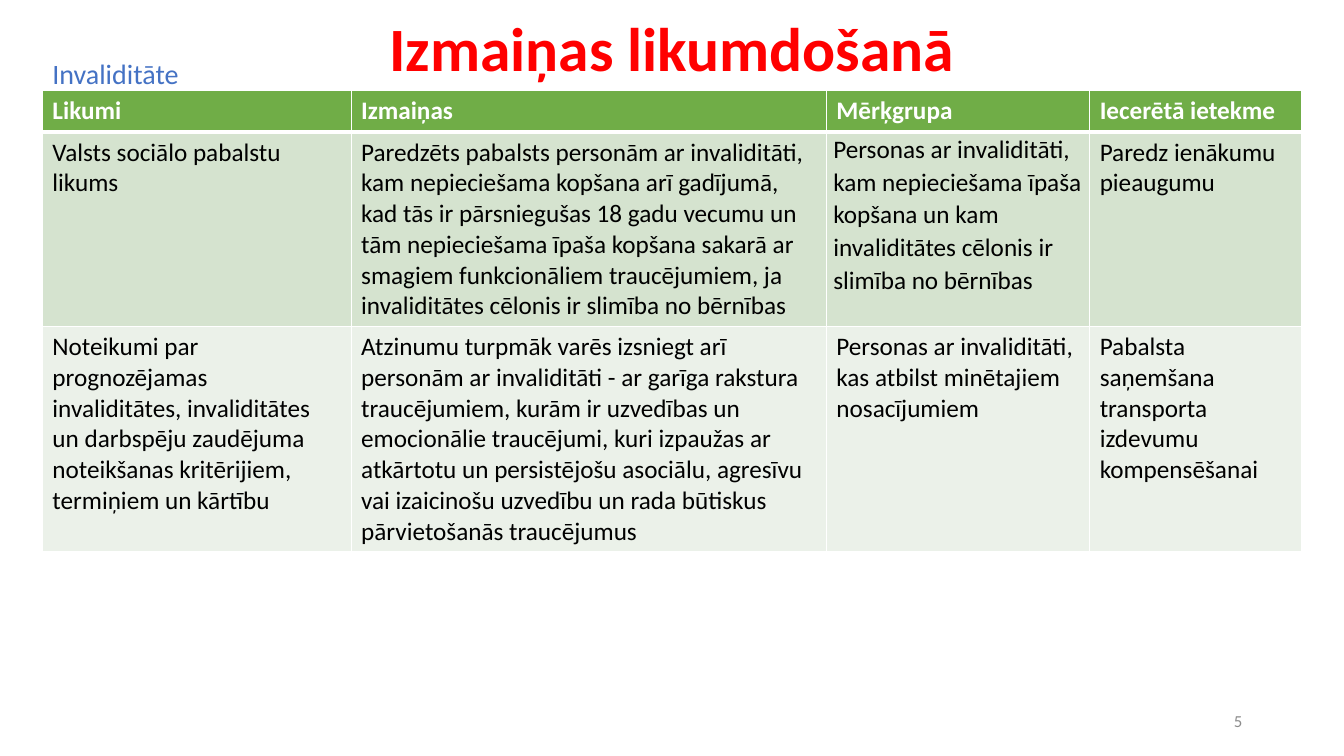
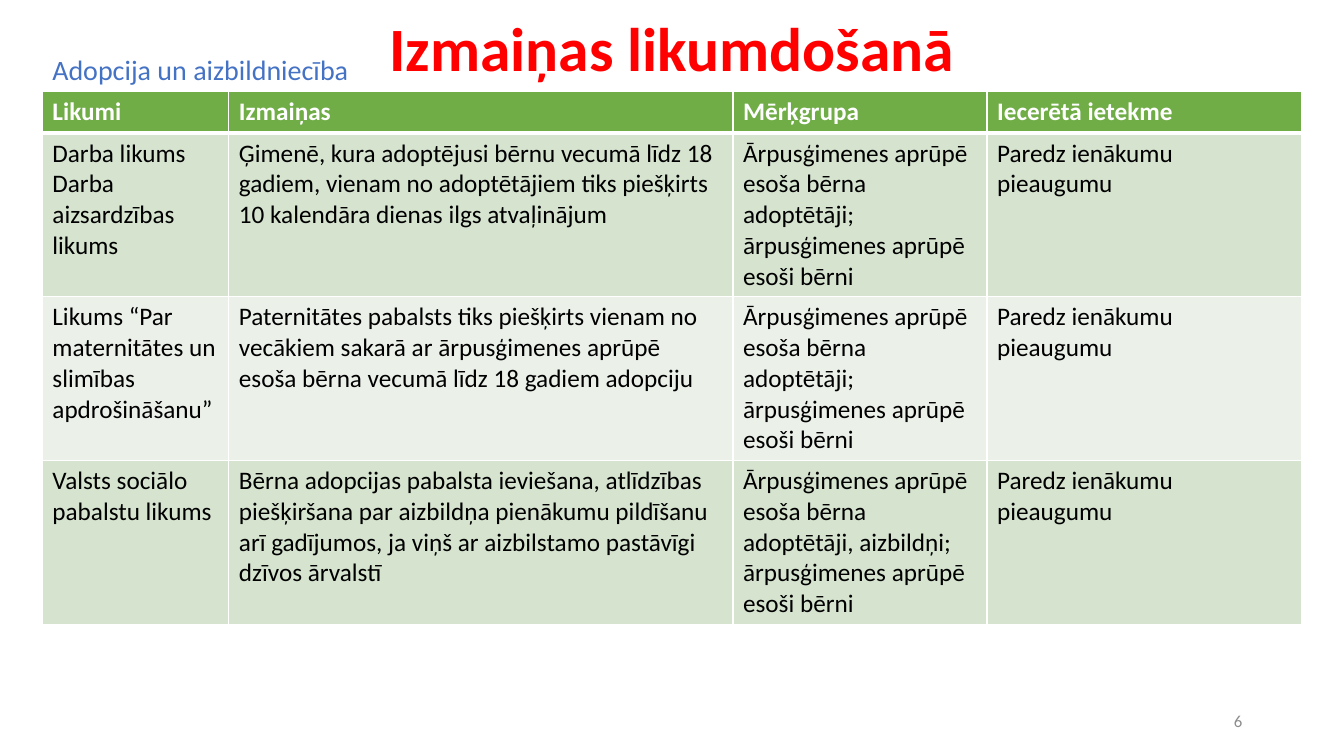
from lxml import etree
from pptx import Presentation
from pptx.dml.color import RGBColor
from pptx.enum.text import MSO_ANCHOR, PP_ALIGN
from pptx.oxml.ns import qn
from pptx.util import Inches, Pt

LEFT, CENTER, RIGHT = PP_ALIGN.LEFT, PP_ALIGN.CENTER, PP_ALIGN.RIGHT
TOP, MIDDLE = MSO_ANCHOR.TOP, MSO_ANCHOR.MIDDLE

SLIDE_W, SLIDE_H = 13.33, 7.5
FONT = "Calibri"
WHITE, BLACK, RED, BLUE, GRAY = "FFFFFF", "000000", "FF0000", "4472C4", "8C8C8C"
HEADER_FILL, BAND_FILLS = "70AD47", ("D5E3CF", "EBF1E9")

TITLE = "Izmaiņas likumdošanā"
HEADERS = ("Likumi", "Izmaiņas", "Mērķgrupa", "Iecerētā ietekme")
INCOME = "Paredz ienākumu pieaugumu"
ADOPTERS = "Ārpusģimenes aprūpē esoša bērna adoptētāji"
CHILDREN = "ārpusģimenes aprūpē esoši bērni"

TITLE_BOX = (0.92, 0, 11.5, 1.02)
NUMBER_BOX = (9.42, 6.95, 3, 0.4)
TABLE_LEFT, TABLE_W = 0.42, 12.49
HEADER_H, LINE_H, ROW_PADDING = 0.41, 0.305, 0.1

SLIDES = [
    {
        "number": 5,
        "topic": "Invaliditāte",
        "topic_top": 0.51,
        "table_top": 0.9,
        "columns": (3.06, 4.71, 2.61, 2.1),
        "lines": (6, 7),
        "tight_cell": (1, 2),
        "rows": [
            ("Valsts sociālo pabalstu likums",
             "Paredzēts pabalsts personām ar invaliditāti, kam nepieciešama kopšana "
             "arī gadījumā, kad tās ir pārsniegušas 18 gadu vecumu un tām nepieciešama "
             "īpaša kopšana sakarā ar smagiem funkcionāliem traucējumiem, ja "
             "invaliditātes cēlonis ir slimība no bērnības",
             "Personas ar invaliditāti, kam nepieciešama īpaša kopšana un kam "
             "invaliditātes cēlonis ir slimība no bērnības",
             INCOME),
            ("Noteikumi par prognozējamas invaliditātes, invaliditātes un darbspēju "
             "zaudējuma noteikšanas kritērijiem, termiņiem un kārtību",
             "Atzinumu turpmāk varēs izsniegt arī personām ar invaliditāti - ar garīga "
             "rakstura traucējumiem, kurām ir uzvedības un emocionālie traucējumi, kuri "
             "izpaužas ar atkārtotu un persistējošu asociālu, agresīvu vai izaicinošu "
             "uzvedību un rada būtiskus pārvietošanās traucējumus",
             "Personas ar invaliditāti, kas atbilst minētajiem nosacījumiem",
             "Pabalsta saņemšana transporta izdevumu kompensēšanai"),
        ],
    },
    {
        "number": 6,
        "topic": "Adopcija un aizbildniecība",
        "topic_top": 0.47,
        "table_top": 0.91,
        "columns": (1.85, 5, 2.52, 3.12),
        "lines": (5, 5, 5),
        "tight_cell": None,
        "rows": [
            ("Darba likums\nDarba aizsardzības likums",
             "Ģimenē, kura adoptējusi bērnu vecumā līdz 18 gadiem, vienam no "
             "adoptētājiem tiks piešķirts 10 kalendāra dienas ilgs atvaļinājum",
             f"{ADOPTERS};\n{CHILDREN}",
             INCOME),
            ("Likums “Par maternitātes un slimības apdrošināšanu”",
             "Paternitātes pabalsts tiks piešķirts vienam no vecākiem sakarā ar "
             "ārpusģimenes aprūpē esoša bērna vecumā līdz 18 gadiem adopciju",
             f"{ADOPTERS};\n{CHILDREN}",
             INCOME),
            ("Valsts sociālo pabalstu likums",
             "Bērna adopcijas pabalsta ieviešana, atlīdzības piešķiršana par aizbildņa "
             "pienākumu pildīšanu arī gadījumos, ja viņš ar aizbilstamo pastāvīgi "
             "dzīvos ārvalstī",
             f"{ADOPTERS}, aizbildņi;\n{CHILDREN}",
             INCOME),
        ],
    },
]


def rgb(color):
    return RGBColor.from_string(color)


def write(tf, text, size, color, bold=False, align=LEFT, spacing=None):
    tf.text = text
    for p in tf.paragraphs:
        p.alignment = align
        if spacing:
            p.line_spacing = spacing
        for r in p.runs:
            r.font.name, r.font.size, r.font.bold = FONT, Pt(size), bold
            r.font.color.rgb = rgb(color)


def add_text(s, box, text, size, color, anchor=TOP, **style):
    tf = s.shapes.add_textbox(*map(Inches, box)).text_frame
    tf.word_wrap = True
    tf.vertical_anchor = anchor
    write(tf, text, size, color, **style)


def set_borders(cell, top, bottom):
    """Draw white borders; top and bottom are widths in points."""
    tc_pr = cell._tc.get_or_add_tcPr()
    for side, width in (("L", 1), ("R", 1), ("T", top), ("B", bottom)):
        line = etree.SubElement(tc_pr, qn(f"a:ln{side}"), w=str(Pt(width)))
        fill = etree.SubElement(line, qn("a:solidFill"))
        etree.SubElement(fill, qn("a:srgbClr"), val=WHITE)


def tighten(cell):
    cell.margin_left = cell.margin_right = Inches(0.07)
    cell.margin_top = cell.margin_bottom = 0
    for p in cell.text_frame.paragraphs:
        p.line_spacing = 1.07


def add_law_table(s, left, top, width, content):
    rows = [HEADERS, *content["rows"]]
    heights = [HEADER_H] + [n * LINE_H + ROW_PADDING for n in content["lines"]]
    box = map(Inches, (left, top, width, sum(heights)))
    table = s.shapes.add_table(len(rows), len(HEADERS), *box).table
    columns = content["columns"]
    for column, share in zip(table.columns, columns):
        column.width = Inches(width * share / sum(columns))
    for i, (row, height) in enumerate(zip(rows, heights)):
        table.rows[i].height = Inches(height)
        header = i == 0
        for j, text in enumerate(row):
            cell = table.cell(i, j)
            write(cell.text_frame, text, 18, WHITE if header else BLACK, bold=header)
            set_borders(cell, 3 if i == 1 else 1, 3 if header else 1)
            cell.fill.solid()
            cell.fill.fore_color.rgb = rgb(HEADER_FILL if header else BAND_FILLS[(i - 1) % 2])
    if content["tight_cell"]:
        tighten(table.cell(*content["tight_cell"]))


def add_law_slide(prs, content):
    s = prs.slides.add_slide(prs.slide_layouts[6])
    add_text(s, TITLE_BOX, TITLE, 44, RED, MIDDLE, bold=True, align=CENTER, spacing=0.9)
    add_text(s, NUMBER_BOX, str(content["number"]), 12, GRAY, MIDDLE, align=RIGHT)
    add_law_table(s, TABLE_LEFT, content["table_top"], TABLE_W, content)
    add_text(s, (TABLE_LEFT, content["topic_top"], 3.15, 0.44), content["topic"], 20, BLUE)


def main():
    prs = Presentation()
    prs.slide_width, prs.slide_height = Inches(SLIDE_W), Inches(SLIDE_H)
    for content in SLIDES:
        add_law_slide(prs, content)
    prs.save("out.pptx")


if __name__ == "__main__":
    main()
